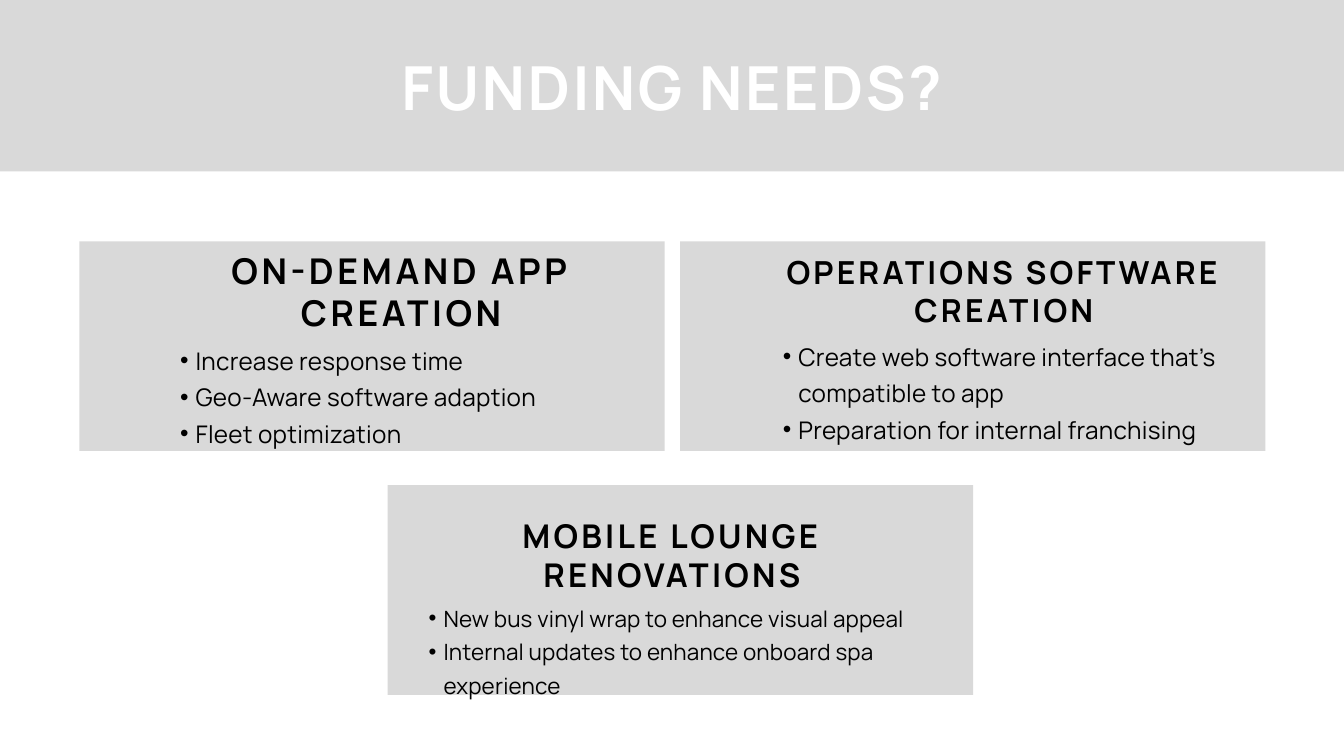
from dataclasses import dataclass

import pptx
import pptx.dml.color
import pptx.enum.shapes
import pptx.enum.text
import pptx.oxml.ns
import pptx.util
from lxml import etree
from pptx.util import Inches

RGBColor = pptx.dml.color.RGBColor
PP_ALIGN = pptx.enum.text.PP_ALIGN

GRAY = RGBColor(0xD9, 0xD9, 0xD9)
WHITE = RGBColor(0xFF, 0xFF, 0xFF)
BLACK = RGBColor(0x00, 0x00, 0x00)
FONT = "Manrope"
COMPARISON_LAYOUT = 4
PANEL_SIZE = (8.71, 3.12)


@dataclass
class Box:
    left: float
    top: float
    width: float
    height: float


@dataclass
class Card:
    panel: Box
    heading: str
    heading_box: Box
    heading_size: float
    items: list[str]
    list_box: Box
    list_size: float
    list_tracking: float
    hanging: float  # bullet indent; the text starts at twice this
    placeholder: int


CARDS = [
    Card(Box(5.77, 7.22, *PANEL_SIZE),
         "MOBILE LOUNGE RENOVATIONS", Box(6.16, 7.67, 7.68, 1.16), 35,
         ["New bus vinyl wrap to enhance visual appeal",
          "Internal updates to enhance onboard spa experience"],
         Box(6.16, 8.9, 7.68, 1.51), 24, 0.2, 0.22, placeholder=1),
    Card(Box(1.18, 3.59, *PANEL_SIZE),
         "ON-DEMAND APP CREATION", Box(2.45, 3.7, 7.04, 1.27), 38,
         ["Increase response time", "Geo-Aware software adaption",
          "Fleet optimization"],
         Box(2.45, 5.04, 7.04, 1.56), 26, 0.3, 0.23, placeholder=2),
    Card(Box(10.12, 3.59, *PANEL_SIZE),
         "OPERATIONS SOFTWARE CREATION", Box(11.42, 3.76, 7.04, 1.14), 34,
         ["Create web software interface that's compatible to app",
          "Preparation for internal franchising"],
         Box(11.42, 4.98, 7.04, 1.64), 26, 0.3, 0.23, placeholder=4),
]


def add_panel(slide, box: Box) -> None:
    shape = slide.shapes.add_shape(
        pptx.enum.shapes.MSO_SHAPE.RECTANGLE, Inches(box.left),
        Inches(box.top), Inches(box.width), Inches(box.height))
    shape.shadow.inherit = False
    shape.fill.solid()
    shape.fill.fore_color.rgb = GRAY
    shape.line.fill.background()


def place(shape, box: Box):
    """Move a text shape to its box and bring it to the front."""
    shape.left, shape.top = Inches(box.left), Inches(box.top)
    shape.width, shape.height = Inches(box.width), Inches(box.height)
    shape.element.getparent().append(shape.element)
    return shape


def add_bullet(paragraph, hanging: float) -> None:
    properties = paragraph._p.get_or_add_pPr()
    properties.set("marL", str(Inches(2 * hanging)))
    properties.set("indent", str(-Inches(hanging)))
    font = etree.SubElement(properties, pptx.oxml.ns.qn("a:buFont"))
    font.set("typeface", "Arial")
    bullet = etree.SubElement(properties, pptx.oxml.ns.qn("a:buChar"))
    bullet.set("char", "•")


def write_text(shape, lines: list[str], *, size: float, leading: float,
               tracking: float, color: RGBColor = BLACK, bold: bool = False,
               align: PP_ALIGN = PP_ALIGN.LEFT, hanging: float = 0) -> None:
    frame = shape.text_frame
    frame.word_wrap = True
    frame.auto_size = pptx.enum.text.MSO_AUTO_SIZE.NONE
    frame.vertical_anchor = pptx.enum.text.MSO_ANCHOR.TOP
    frame.margin_left = frame.margin_right = 0
    frame.margin_top = frame.margin_bottom = 0
    frame.text = "\n".join(lines)
    for paragraph in frame.paragraphs:
        paragraph.alignment = align
        paragraph.line_spacing = pptx.util.Pt(leading)
        paragraph.space_before = paragraph.space_after = pptx.util.Pt(0)
        if hanging:
            add_bullet(paragraph, hanging)
        run = paragraph.runs[0]
        run.font.name = FONT
        run.font.size = pptx.util.Pt(size)
        run.font.bold = bold
        run.font.color.rgb = color
        run.font._element.set("spc", str(round(tracking * 100)))


def add_card(slide, card: Card) -> None:
    add_panel(slide, card.panel)
    heading = place(slide.shapes.add_textbox(0, 0, 0, 0), card.heading_box)
    write_text(heading, [card.heading], size=card.heading_size,
               leading=card.heading_size * 1.2,
               tracking=card.heading_size / 10, bold=True,
               align=PP_ALIGN.CENTER)
    body = place(slide.placeholders[card.placeholder], card.list_box)
    write_text(body, card.items, size=card.list_size,
               leading=card.list_size * 1.5, tracking=card.list_tracking,
               hanging=card.hanging)


def main() -> None:
    presentation = pptx.Presentation()
    presentation.slide_width = Inches(20)
    presentation.slide_height = Inches(11.25)
    slide = presentation.slides.add_slide(
        presentation.slide_layouts[COMPARISON_LAYOUT])

    # Title band
    add_panel(slide, Box(-0.29, 0, 20.57, 2.55))
    title = place(slide.shapes.title, Box(1.33, 0.7, 17.34, 1.12))
    write_text(title, ["FUNDING NEEDS?"], size=65, leading=81.2,
               tracking=2.6, color=WHITE, bold=True, align=PP_ALIGN.CENTER)

    # Funding cards
    for card in CARDS:
        add_card(slide, card)

    # Unused placeholder
    for shape in list(slide.placeholders):
        if not shape.text_frame.text:
            shape.element.getparent().remove(shape.element)

    presentation.save("out.pptx")


if __name__ == "__main__":
    main()
